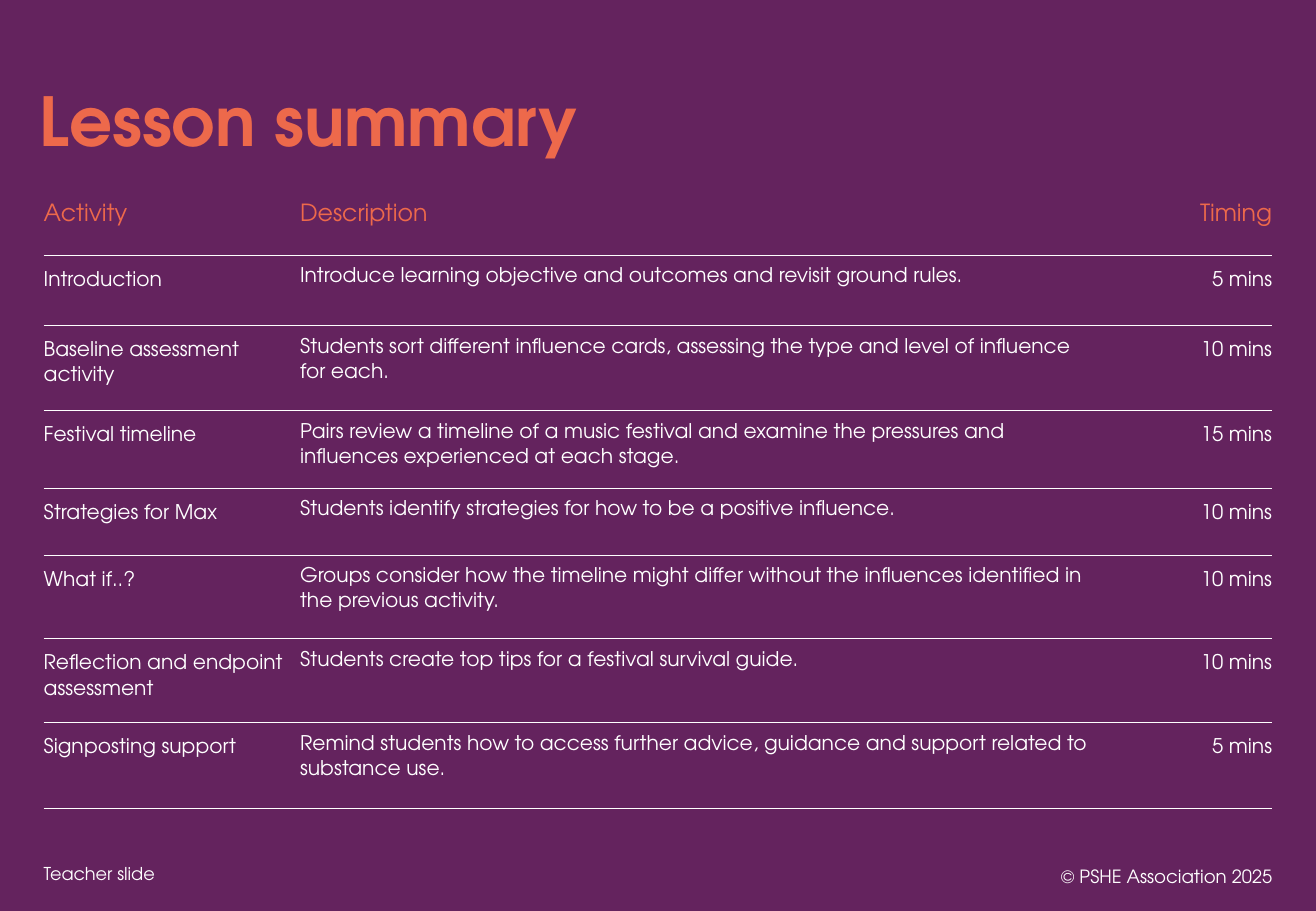
from dataclasses import dataclass
from typing import NamedTuple

from lxml import etree
from pptx import Presentation
from pptx import util as u
from pptx.dml.color import RGBColor
from pptx.enum import text
from pptx.oxml import ns


@dataclass(frozen=True)
class Theme:
    font: str = "TeX Gyre Adventor"
    back: str = "64235E"
    accent: str = "ED694B"
    light: str = "FFFFFF"
    title: float = 40
    header: float = 14
    body: float = 12
    teacher: float = 10.5
    copyright: float = 10.8
    leading: float = 15
    rule: float = 0.5


class Label(NamedTuple):
    words: str
    box: tuple[float, float, float, float]
    size: float
    color: str
    bold: bool = False
    align: text.PP_ALIGN = text.PP_ALIGN.LEFT
    anchor: text.MSO_ANCHOR = text.MSO_ANCHOR.MIDDLE
    spacing: float | None = None


class Activity(NamedTuple):
    name: str
    description: str
    timing: str
    height: float


class Column(NamedTuple):
    width: float
    align: text.PP_ALIGN
    insets: tuple[float, float, float, float]  # left, top, right, bottom


T = Theme()
LEFT, RIGHT = text.PP_ALIGN.LEFT, text.PP_ALIGN.RIGHT
NO_STYLE = "{2D5ABB26-0587-4C30-8999-92F81FD0307C}"

LABELS = [
    Label("Teacher slide", (0.26, 7.05, 6.78, 0.29), T.teacher, T.light,
          anchor=text.MSO_ANCHOR.TOP),
    Label("Lesson summary", (0.23, 0.65, 8.2, 0.76), T.title, T.accent,
          bold=True, spacing=0.9),
    Label("© PSHE Association 2025", (8.13, 7.01, 2.44, 0.4), T.copyright,
          T.light, align=RIGHT),
]

COLUMNS = [
    Column(2.11, LEFT, (0, 0.08, 0.08, 0.08)),
    Column(6.61, LEFT, (0, 0.05, 0.1, 0.05)),
    Column(1.39, RIGHT, (0.08, 0.08, 0, 0.08)),
]

# The first entry is the header row
ACTIVITIES = [
    Activity("Activity", "Description", "Timing", 0.66),
    Activity("Introduction",
             "Introduce learning objective and outcomes and revisit ground rules.",
             "5 mins", 0.58),
    Activity("Baseline assessment activity",
             "Students sort different influence cards, assessing the type and "
             "level of influence for each.", "10 mins", 0.7),
    Activity("Festival timeline",
             "Pairs review a timeline of a music festival and examine the "
             "pressures and influences experienced at each stage.", "15 mins", 0.64),
    Activity("Strategies for Max",
             "Students identify strategies for how to be a positive influence.",
             "10 mins", 0.55),
    Activity("What if..?",
             "Groups consider how the timeline might differ without the "
             "influences identified in the previous activity.", "10 mins", 0.69),
    Activity("Reflection and endpoint assessment",
             "Students create top tips for a festival survival guide.",
             "10 mins", 0.69),
    Activity("Signposting support",
             "Remind students how to access further advice, guidance and "
             "support related to substance use.", "5 mins", 0.71),
]


def add_run(p, words: str, size: float, color: str, bold: bool = False) -> None:
    r = p.add_run()
    r.text = words
    r.font.name, r.font.size, r.font.bold = T.font, u.Pt(size), bold
    r.font.color.rgb = RGBColor.from_string(color)


def add_label(s, label: Label) -> None:
    tf = s.shapes.add_textbox(*map(u.Inches, label.box)).text_frame
    tf.word_wrap = True
    tf.vertical_anchor = label.anchor
    p = tf.paragraphs[0]
    p.alignment = label.align
    p.line_spacing = label.spacing
    add_run(p, label.words, label.size, label.color, label.bold)


def set_borders(cell, ruled: tuple[str, ...]) -> None:
    tcPr = cell._tc.get_or_add_tcPr()
    for side in ("lnL", "lnR", "lnT", "lnB"):
        ln = etree.SubElement(tcPr, ns.qn(f"a:{side}"), w=str(u.Pt(T.rule)))
        if side in ruled:
            fill = etree.SubElement(ln, ns.qn("a:solidFill"))
            etree.SubElement(fill, ns.qn("a:srgbClr"), val=T.light)
        else:
            etree.SubElement(ln, ns.qn("a:noFill"))


def fill_cell(cell, words: str, column: Column, header: bool) -> None:
    set_borders(cell, ("lnB",) if header else ("lnT", "lnB"))
    cell.fill.background()
    left, top, right, bottom = column.insets
    cell.margin_left, cell.margin_right = u.Inches(left), u.Inches(right)
    cell.margin_top, cell.margin_bottom = u.Inches(top), u.Inches(bottom)
    p = cell.text_frame.paragraphs[0]
    p.alignment = column.align
    if header:
        cell.vertical_anchor = text.MSO_ANCHOR.MIDDLE
        add_run(p, words, T.header, T.accent)
    else:
        p.line_spacing = u.Pt(T.leading)
        add_run(p, words, T.body, T.light)


def add_summary(s) -> None:
    width = sum(c.width for c in COLUMNS)
    height = sum(a.height for a in ACTIVITIES)
    table = s.shapes.add_table(
        len(ACTIVITIES), len(COLUMNS), u.Inches(0.36), u.Inches(1.44),
        u.Inches(width), u.Inches(height)).table
    table.horz_banding = False
    table._tbl.tblPr.find(ns.qn("a:tableStyleId")).text = NO_STYLE
    for i, column in enumerate(COLUMNS):
        table.columns[i].width = u.Inches(column.width)
    for row, activity in enumerate(ACTIVITIES):
        table.rows[row].height = u.Inches(activity.height)
        for i, column in enumerate(COLUMNS):
            fill_cell(table.cell(row, i), activity[i], column, row == 0)


def main() -> None:
    prs = Presentation()
    prs.slide_width, prs.slide_height = u.Inches(10.83), u.Inches(7.5)
    s = prs.slides.add_slide(prs.slide_layouts[6])

    # Background
    s.background.fill.solid()
    s.background.fill.fore_color.rgb = RGBColor.from_string(T.back)

    # Title and footer
    for label in LABELS:
        add_label(s, label)

    # Activity table
    add_summary(s)
    prs.save("out.pptx")


if __name__ == "__main__":
    main()
